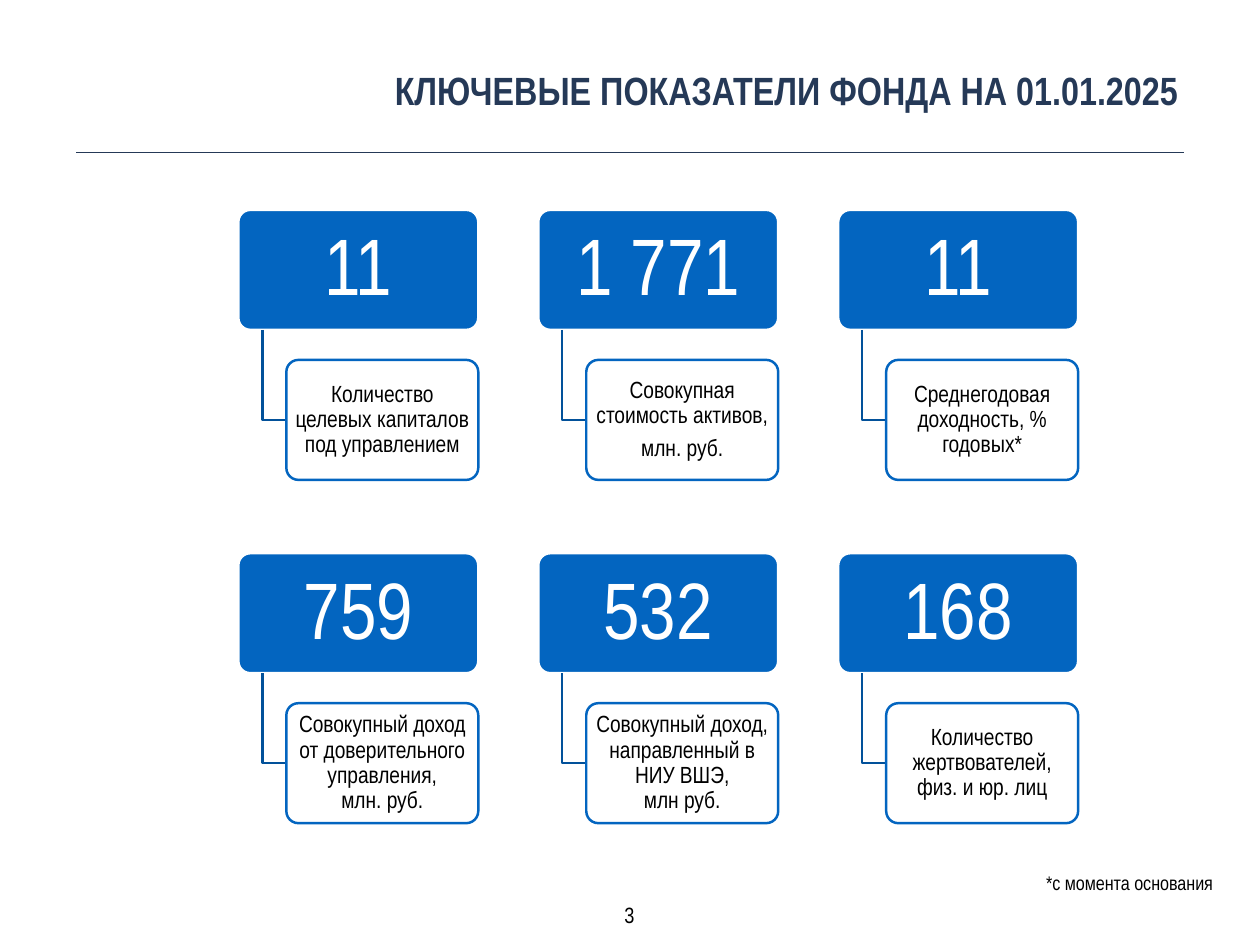
"""Build the slide with the key figures of the endowment fund."""
from lxml import etree
from pptx import Presentation
from pptx.dml.color import RGBColor
from pptx.enum.shapes import MSO_CONNECTOR, MSO_SHAPE
from pptx.enum.text import MSO_ANCHOR, MSO_AUTO_SIZE, PP_ALIGN
from pptx.oxml.ns import qn
from pptx.util import Pt

HEADING = "КЛЮЧЕВЫЕ ПОКАЗАТЕЛИ ФОНДА НА 01.01.2025"
INDICATORS = [
    ("11", "Количество целевых капиталов под управлением"),
    ("1 771", "Совокупная стоимость активов,\nмлн. руб."),
    ("11", "Среднегодовая доходность, % годовых*"),
    ("759", "Совокупный доход от доверительного управления,\vмлн. руб."),
    ("532", "Совокупный доход, направленный в НИУ ВШЭ,\vмлн руб."),
    ("168", "Количество жертвователей, физ. и юр. лиц"),
]
FOOTNOTE = "*с момента основания"
PAGE_NUMBER = "3"

FONT = "Arial Narrow"
NAVY = RGBColor(0x25, 0x39, 0x57)
BLUE = RGBColor(0x03, 0x65, 0xC0)
DARK_BLUE = RGBColor(0x02, 0x51, 0x9A)
WHITE = RGBColor(0xFF, 0xFF, 0xFF)
BLACK = RGBColor(0x00, 0x00, 0x00)
CENTER, RIGHT = PP_ALIGN.CENTER, PP_ALIGN.RIGHT
TOP, MIDDLE = MSO_ANCHOR.TOP, MSO_ANCHOR.MIDDLE
NO_FIT, GROW = MSO_AUTO_SIZE.NONE, MSO_AUTO_SIZE.SHAPE_TO_FIT_TEXT
ROUNDED, STRAIGHT = MSO_SHAPE.ROUNDED_RECTANGLE, MSO_CONNECTOR.STRAIGHT

COLUMNS = 3
GRID_LEFT, GRID_TOP = 193.7, 170.6
COLUMN_STEP, ROW_STEP = 243.75, 279
CARD_WIDTH, CARD_HEIGHT = 195, 97.5
LABEL_INDENT, LABEL_DROP = 39, 121.9
ELBOW_INDENT = LABEL_INDENT / 2


def apply(target, values):
    for name, value in values.items():
        setattr(target, name, value)


def write(frame, text, size, color, align, margins, bold=False,
          line_spacing=1.0, gap=0, last_gap=0, **frame_format):
    side, edge = margins
    frame.text = text
    apply(frame, {"margin_left": Pt(side), "margin_right": Pt(side),
                  "margin_top": Pt(edge), "margin_bottom": Pt(edge),
                  "word_wrap": True, "auto_size": NO_FIT, **frame_format})
    for paragraph in frame.paragraphs:
        apply(paragraph, {"alignment": align, "line_spacing": line_spacing,
                          "space_after": Pt(gap)})
        for run in paragraph.runs:
            apply(run.font, {"name": FONT, "size": Pt(size), "bold": bold})
            run.font.color.rgb = color
    frame.paragraphs[-1].space_after = Pt(last_gap)


def add_card(shapes, left, top, width, fill, line, text, **text_format):
    card = shapes.add_shape(ROUNDED, Pt(left), Pt(top), Pt(width), Pt(CARD_HEIGHT))
    card.adjustments[0] = 0.1
    card.shadow.inherit = False
    card.fill.solid()
    card.fill.fore_color.rgb = fill
    card.line.color.rgb = line
    card.line.width = Pt(2)
    write(card.text_frame, text, align=CENTER, line_spacing=0.9,
          vertical_anchor=MIDDLE, **text_format)
    return card


def add_elbow(shapes, left, top):
    builder = shapes.build_freeform(Pt(left), Pt(top))
    bottom = top + LABEL_DROP - CARD_HEIGHT / 2
    right = left + LABEL_INDENT - ELBOW_INDENT
    builder.add_line_segments([(Pt(left), Pt(bottom)), (Pt(right), Pt(bottom))],
                              close=False)
    elbow = builder.convert_to_shape()
    elbow.shadow.inherit = False
    elbow.fill.background()
    elbow.line.color.rgb = DARK_BLUE
    elbow.line.width = Pt(2)


def add_indicator(shapes, left, top, figure, label):
    add_card(shapes, left, top, CARD_WIDTH, BLUE, WHITE, figure,
             size=65, color=WHITE, margins=(10, 6))
    add_elbow(shapes, left + ELBOW_INDENT, top + CARD_HEIGHT)
    label_card = add_card(shapes, left + LABEL_INDENT, top + LABEL_DROP,
                          CARD_WIDTH - LABEL_INDENT, WHITE, BLUE, label,
                          size=19, color=BLACK, margins=(3, 2), gap=6.65)
    white = label_card.fill._xPr.find(qn("a:solidFill"))[0]
    etree.SubElement(white, qn("a:alpha"), val="90000")


def main():
    prs = Presentation()
    prs.slide_width, prs.slide_height = Pt(1024), Pt(768)
    slide = prs.slides.add_slide(prs.slide_layouts[5])
    shapes = slide.shapes

    heading = shapes.title
    apply(heading, {"left": Pt(50), "top": Pt(50), "width": Pt(912), "height": Pt(74)})
    write(heading.text_frame, HEADING, 32, NAVY, RIGHT, (4, 4), bold=True,
          vertical_anchor=TOP)

    rule = shapes.add_connector(STRAIGHT, Pt(62), Pt(124), Pt(962), Pt(124))
    rule.line.color.rgb = NAVY
    rule.line.width = Pt(1)
    etree.SubElement(rule._element.spPr, qn("a:effectLst"))

    for index, (figure, label) in enumerate(INDICATORS):
        row, column = divmod(index, COLUMNS)
        add_indicator(shapes, GRID_LEFT + column * COLUMN_STEP,
                      GRID_TOP + row * ROW_STEP, figure, label)

    footnote = shapes.add_textbox(Pt(481), Pt(701.3), Pt(512), Pt(29.5))
    write(footnote.text_frame, FOOTNOTE, 16, BLACK, RIGHT, (7.2, 3.6),
          line_spacing=1.15, last_gap=10, auto_size=GROW)

    page_number = shapes.add_textbox(Pt(497), Pt(728.6), Pt(29), Pt(30))
    write(page_number.text_frame, PAGE_NUMBER, 18, BLACK, CENTER, (4, 4),
          word_wrap=False, auto_size=GROW)

    prs.save("out.pptx")


if __name__ == "__main__":
    main()
